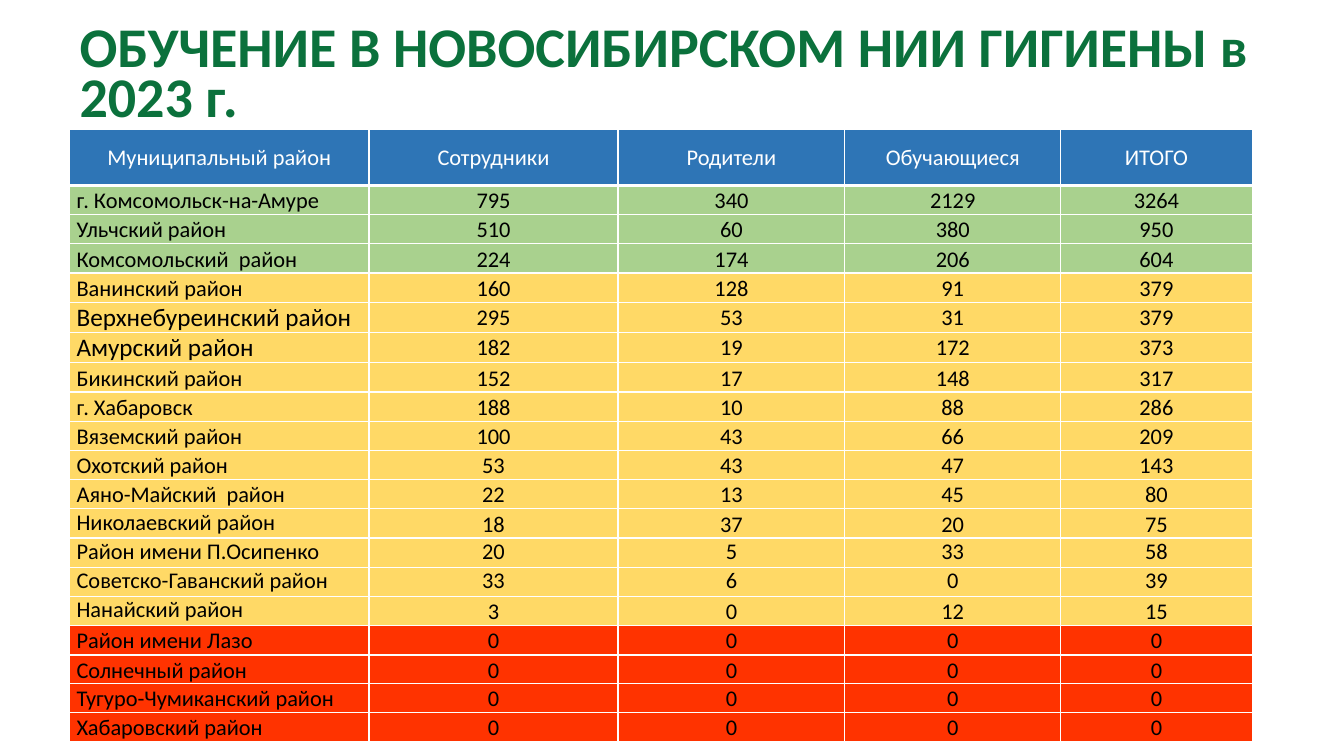
from dataclasses import dataclass

from lxml import etree
from pptx import Presentation
from pptx.dml.color import RGBColor
from pptx.enum.text import MSO_ANCHOR, PP_ALIGN
from pptx.oxml.ns import qn
from pptx.slide import Slide
from pptx.table import Table, _Cell
from pptx.text.text import _Paragraph
from pptx.util import Inches, Pt

LEFT, CENTER = PP_ALIGN.LEFT, PP_ALIGN.CENTER
TOP, MIDDLE = MSO_ANCHOR.TOP, MSO_ANCHOR.MIDDLE
FONT = "Calibri"
COLORS = {
    "title": "0B713C",
    "head": "2E75B6",
    "high": "A9D18E",
    "mid": "FFD966",
    "none": "FF3300",
    "white": "FFFFFF",
    "black": "000000",
}
TITLE = "ОБУЧЕНИЕ В НОВОСИБИРСКОМ НИИ ГИГИЕНЫ в 2023 г."
HEADS = ["Муниципальный район", "Сотрудники", "Родители", "Обучающиеся", "ИТОГО"]
WIDTHS = [2.97, 2.47, 2.25, 2.14, 1.9]
HEAD_H, ROW_H = 0.56, 0.29
LOOSE = 1.07
EDGES = {"L": 1, "R": 1, "T": 1, "B": 3}


@dataclass
class Area:
    name: str
    staff: int
    parents: int
    pupils: int
    level: str = "mid"
    size: int = 16
    lead: float = LOOSE
    num_lead: float = LOOSE
    height: float = ROW_H

    def values(self) -> list[int]:
        counts = [self.staff, self.parents, self.pupils]
        return counts + [sum(counts)]


AREAS = [
    Area("г. Комсомольск-на-Амуре", 795, 340, 2129, "high"),
    Area("Ульчский район", 510, 60, 380, "high"),
    Area("Комсомольский  район", 224, 174, 206, "high"),
    Area("Ванинский район", 160, 128, 91),
    Area("Верхнебуреинский район", 295, 53, 31, size=18, lead=1.0),
    Area("Амурский район", 182, 19, 172, size=18, lead=1.0),
    Area("Бикинский район", 152, 17, 148),
    Area("г. Хабаровск", 188, 10, 88),
    Area("Вяземский район", 100, 43, 66),
    Area("Охотский район", 53, 43, 47),
    Area("Аяно-Майский  район", 22, 13, 45),
    Area("Николаевский район", 18, 37, 20, lead=1.0),
    Area("Район имени П.Осипенко", 20, 5, 33, lead=1.0, num_lead=1.0),
    Area("Советско-Гаванский район", 33, 6, 0, lead=1.0, num_lead=1.0),
    Area("Нанайский район", 3, 0, 12, lead=1.0),
    Area("Район имени Лазо", 0, 0, 0, "none"),
    Area("Солнечный район", 0, 0, 0, "none", height=0.25),
    Area("Тугуро-Чумиканский район", 0, 0, 0, "none", height=0.25),
    Area("Хабаровский район", 0, 0, 0, "none", height=0.28),
]


def rgb(key: str) -> RGBColor:
    return RGBColor.from_string(COLORS[key])


def style(par: _Paragraph, size: int, color: str, bold: bool, lead: float) -> None:
    par.line_spacing = lead
    par.font.name = FONT
    par.font.size = Pt(size)
    par.font.bold = bold
    par.font.color.rgb = rgb(color)


def fill_cell(cell: _Cell, text: str, fill: str, color: str = "black",
              size: int = 16, lead: float = LOOSE, align: PP_ALIGN = CENTER,
              anchor: MSO_ANCHOR = TOP) -> None:
    cell.margin_left = cell.margin_right = Inches(0.07)
    cell.margin_top = cell.margin_bottom = 0
    cell.vertical_anchor = anchor
    cell.fill.solid()
    cell.fill.fore_color.rgb = rgb(fill)
    cell.text = text
    par = cell.text_frame.paragraphs[0]
    par.alignment = align
    style(par, size, color, False, lead)


def add_edges(cell: _Cell) -> None:
    props = cell._tc.get_or_add_tcPr()
    for side, width in EDGES.items():
        line = etree.SubElement(props, qn(f"a:ln{side}"), w=str(Pt(width)))
        solid = etree.SubElement(line, qn("a:solidFill"))
        etree.SubElement(solid, qn("a:srgbClr"), val=COLORS["white"])


def add_title(slide: Slide) -> None:
    box = slide.shapes.add_textbox(Inches(0.69), Inches(0.24), Inches(12.28), Inches(1.05))
    frame = box.text_frame
    frame.word_wrap = True
    frame.vertical_anchor = MIDDLE
    frame.text = TITLE
    style(frame.paragraphs[0], 40, "title", True, 0.75)


def fill_head(table: Table) -> None:
    table.rows[0].height = Inches(HEAD_H)
    for col, text in enumerate(HEADS):
        cell = table.cell(0, col)
        add_edges(cell)
        fill_cell(cell, text, "head", "white", anchor=MIDDLE)


def fill_row(table: Table, row: int, area: Area) -> None:
    table.rows[row].height = Inches(area.height)
    fill_cell(table.cell(row, 0), area.name, area.level,
              size=area.size, lead=area.lead, align=LEFT)
    for col, value in enumerate(area.values(), 1):
        fill_cell(table.cell(row, col), str(value), area.level, lead=area.num_lead)


def add_table(slide: Slide) -> None:
    height = HEAD_H + sum(area.height for area in AREAS)
    table = slide.shapes.add_table(
        len(AREAS) + 1, len(HEADS), Inches(0.69), Inches(1.28),
        Inches(sum(WIDTHS)), Inches(height)).table
    for column, width in zip(table.columns, WIDTHS):
        column.width = Inches(width)
    fill_head(table)
    for row, area in enumerate(AREAS, 1):
        fill_row(table, row, area)


def main() -> None:
    deck = Presentation()
    deck.slide_width, deck.slide_height = Inches(13.33), Inches(7.5)
    slide = deck.slides.add_slide(deck.slide_layouts[6])
    add_title(slide)
    add_table(slide)
    deck.save("out.pptx")


if __name__ == "__main__":
    main()
